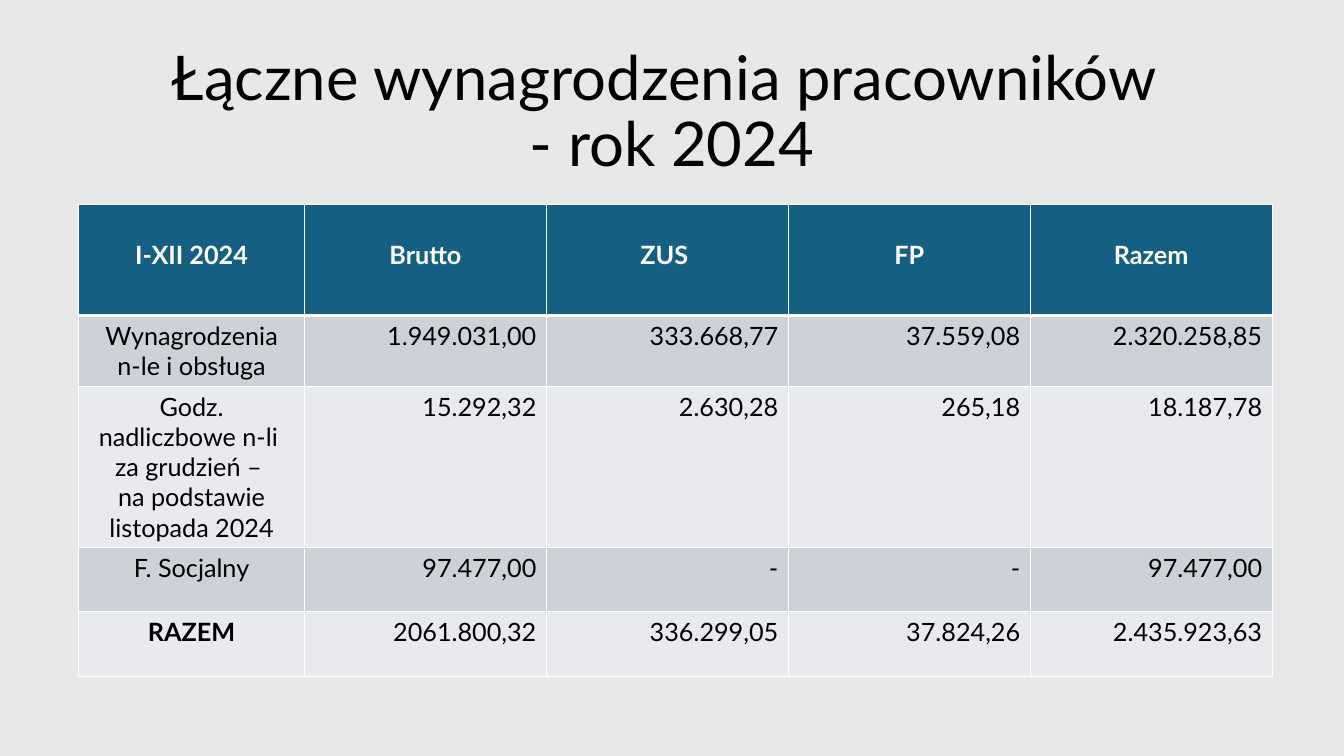
from dataclasses import dataclass

from pptx import Presentation
from pptx.dml.color import RGBColor as Rgb
from pptx.enum.text import MSO_ANCHOR as Anchor, PP_ALIGN as Align
from pptx.oxml import parse_xml
from pptx.oxml.ns import nsdecls
from pptx.util import Pt

HUES = {
    "back": "E8E8E8",
    "head": "156082",
    "dark": "CCD2D8",
    "light": "E8EAED",
    "white": "FFFFFF",
    "black": "000000",
}
FONT = "Lato"
SIZE = 18
LINE = 1.2 * SIZE
PAD = 3.6
WIDTHS = [161.3] + [172.8] * 4


@dataclass
class Row:
    label: list[str]
    values: list[str]
    height: float
    fill: str
    bold: bool = False


ROWS = [
    Row(["I-XII 2024"], ["Brutto", "ZUS ", "FP", "Razem"], 79.2, "head", True),
    Row(["Wynagrodzenia", "n-le i obsługa"],
        ["1.949.031,00", "333.668,77", "37.559,08", "2.320.258,85"], 50.4, "dark"),
    Row(["Godz. nadliczbowe n-li ", "za grudzień – ", "na podstawie listopada 2024"],
        ["15.292,32", "2.630,28", "265,18", "18.187,78"], 115.2, "light"),
    Row(["F. Socjalny"], ["97.477,00", "-", "-", "97.477,00"], 46, "dark"),
    Row(["RAZEM"], ["2061.800,32", "336.299,05", "37.824,26", "2.435.923,63"],
        46, "light", True),
]


def hue(name: str) -> Rgb:
    return Rgb.from_string(HUES[name])


def add_run(para, text: str, size: float, color: str, bold: bool = False) -> None:
    run = para.add_run()
    run.text = text
    font = run.font
    font.name, font.size, font.bold = FONT, Pt(size), bold
    font.color.rgb = hue(color)


def add_title(slide) -> None:
    box = slide.shapes.add_textbox(Pt(66), Pt(28.8), Pt(828), Pt(104.4))
    frame = box.text_frame
    frame.word_wrap = True
    frame.vertical_anchor = Anchor.MIDDLE
    para = frame.paragraphs[0]
    para.alignment = Align.CENTER
    para.line_spacing = 0.9
    add_run(para, "Łączne wynagrodzenia pracowników ", 44, "black")
    para.add_line_break()
    add_run(para, "- rok 2024", 44, "black")


def add_edges(cell, top: float, bottom: float) -> None:
    """Draw white cell borders; call before the fill, which follows them in the XML."""
    props = cell._tc.get_or_add_tcPr()
    for side, width in {"L": 1, "R": 1, "T": top, "B": bottom}.items():
        props.append(parse_xml(
            f'<a:ln{side} {nsdecls("a")} w="{Pt(width)}"><a:solidFill>'
            f'<a:srgbClr val="{HUES["white"]}"/></a:solidFill></a:ln{side}>'))


def fill_cell(cell, lines: list[str], align: Align, row: Row, bold: bool) -> None:
    head = row.fill == "head"
    cell.margin_top = Pt(PAD + LINE if head else PAD)
    cell.fill.solid()
    cell.fill.fore_color.rgb = hue(row.fill)
    frame = cell.text_frame
    for i, line in enumerate(lines):
        para = frame.add_paragraph() if i else frame.paragraphs[0]
        para.alignment = align
        add_run(para, line, SIZE, "white" if head else "black", bold)


def add_pay(slide) -> None:
    """Add the table of pay by kind."""
    high = sum(row.height for row in ROWS)
    table = slide.shapes.add_table(len(ROWS), len(WIDTHS), Pt(56.2), Pt(146.2),
                                   Pt(sum(WIDTHS)), Pt(high)).table
    table.first_row = table.horz_banding = False
    for col, width in zip(table.columns, WIDTHS):
        col.width = Pt(width)
    for r, row in enumerate(ROWS):
        table.rows[r].height = Pt(row.height)
        head = r == 0
        for c, lines in enumerate([row.label] + [[value] for value in row.values]):
            cell = table.cell(r, c)
            add_edges(cell, 3 if r == 1 else 1, 3 if head else 1)
            align = Align.CENTER if head or c == 0 else Align.RIGHT
            fill_cell(cell, lines, align, row, row.bold and (head or c == 0))


def main() -> None:
    deck = Presentation()
    deck.slide_width, deck.slide_height = Pt(960), Pt(540)
    slide = deck.slides.add_slide(deck.slide_layouts[6])
    back = slide.background.fill
    back.solid()
    back.fore_color.rgb = hue("back")
    add_title(slide)
    add_pay(slide)
    deck.save("out.pptx")


if __name__ == "__main__":
    main()
